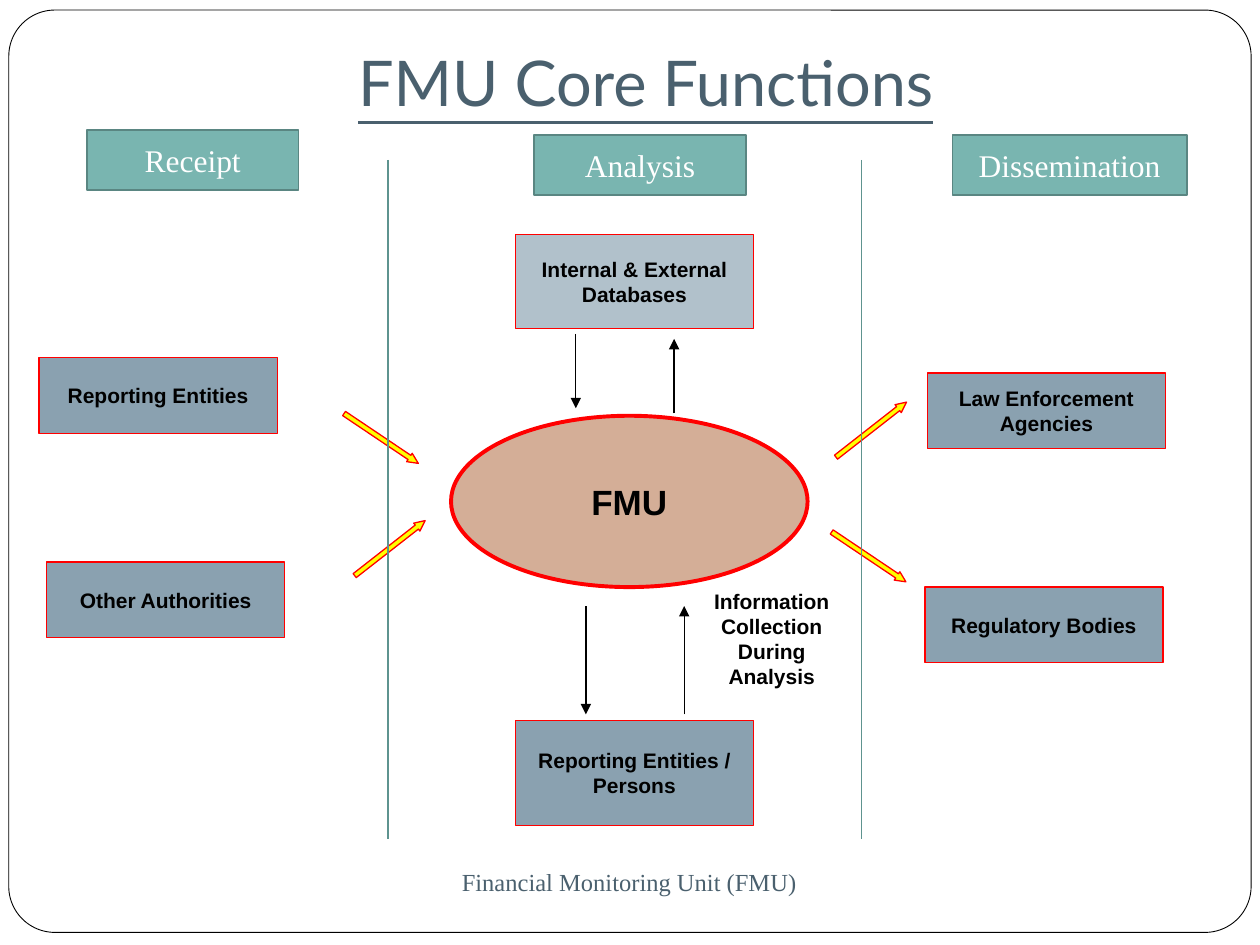
from pptx import Presentation
from pptx import util as u
from pptx.dml.color import RGBColor
from pptx.enum import shapes, text
from pptx.oxml.ns import qn
from lxml import etree

KIND = shapes.MSO_SHAPE
MID = text.MSO_ANCHOR.MIDDLE
WIDE, SLIM = 1.89, 1.68


def color(code):
    """Turn a hex string into a colour."""
    return RGBColor.from_string(code)


def place(item, box):
    """Set left, top, width and height in inches."""
    item.left, item.top, item.width, item.height = map(u.Inches, box)


def write(item, words, size=12, font="Arial", ink="000000", bold=False,
          under=False, anchor=MID, space=None):
    """Put formatted, centred text into a shape."""
    frame = item.text_frame
    frame.word_wrap = True
    frame.auto_size = text.MSO_AUTO_SIZE.NONE
    frame.vertical_anchor = anchor
    para = frame.paragraphs[0]
    para.alignment = text.PP_ALIGN.CENTER
    para.line_spacing = space
    run = para.add_run()
    run.text = words
    run.font.size = u.Pt(size)
    run.font.name = font
    run.font.bold = bold
    run.font.underline = under
    run.font.color.rgb = color(ink)


def draw(slide, kind, box, fill, edge, width=0.75):
    """Add a filled and outlined preset shape."""
    item = slide.shapes.add_shape(kind, *map(u.Inches, box))
    item.shadow.inherit = False
    item.fill.solid()
    item.fill.fore_color.rgb = color(fill)
    item.line.color.rgb = color(edge)
    item.line.width = u.Pt(width)
    return item


def node(slide, words, left, top, high=0.6, fill="8AA1B0"):
    """Add a red-edged box with a bold label."""
    item = draw(slide, KIND.RECTANGLE, (left, top, WIDE, high), fill, "FF0000")
    write(item, words, bold=True)


def head(slide, words, left, top, wide=SLIM):
    """Add a teal column heading."""
    item = draw(slide, KIND.RECTANGLE, (left, top, wide, 0.48), "79B5B0", "5A8682", 1)
    write(item, words, size=18, font="Times New Roman", ink="FFFFFF")


def label(slide, words, box, **style):
    """Add a text box."""
    write(slide.shapes.add_textbox(*map(u.Inches, box)), words, **style)


def flow(slide, left, top, turn):
    """Add a yellow block arrow turned by some degrees."""
    item = draw(slide, KIND.RIGHT_ARROW, (left, top, 0.71, 0.08), "FFFF00", "FF0000")
    item.adjustments[1] = 1.05
    item.rotation = turn


def rule(slide, x, start, end, ink="000000", arrow=True):
    """Add an upright line, with an arrowhead at its end if wanted."""
    item = slide.shapes.add_connector(
        shapes.MSO_CONNECTOR.STRAIGHT, *map(u.Inches, (x, start, x, end)))
    item.line.color.rgb = color(ink)
    item.line.width = u.Pt(0.75)
    if arrow:
        tail = etree.SubElement(item.line._get_or_add_ln(), qn("a:tailEnd"))
        tail.set("type", "triangle")
    etree.SubElement(item._element.spPr, qn("a:effectLst"))


def main():
    """Build and save the slide."""
    deck = Presentation()
    deck.slide_width, deck.slide_height = u.Inches(10), u.Inches(7.5)
    slide = deck.slides.add_slide(deck.slide_layouts[5])
    title = slide.shapes.title

    border = draw(slide, KIND.ROUNDED_RECTANGLE, (0.07, 0.08, 9.86, 7.32),
                  "FFFFFF", "000000", 0.5)
    border.adjustments[0] = 0.05
    title._element.addprevious(border._element)
    place(title, (0.25, 0.24, 9.75, 0.8))
    title.text_frame.margin_bottom = u.Inches(0.1)
    write(title, "FMU Core Functions", size=36, font="Lato", ink="4A606E",
          under=True, anchor=text.MSO_ANCHOR.BOTTOM, space=0.8)
    label(slide, "Financial Monitoring Unit (FMU)", (2.83, 6.75, 4.33, 0.5),
          size=14, font="Times New Roman", ink="4A606E")

    hub = draw(slide, KIND.OVAL, (3.58, 3.3, 2.83, 1.36), "D4AE97", "FF0000", 2.25)
    write(hub, "FMU", size=20, bold=True)

    for words, *spot in (
            ("Reporting Entities / Persons", 4.09, 5.72, 0.83),
            ("Reporting Entities", 0.31, 2.84),
            ("Other Authorities", 0.37, 4.46),
            ("Law Enforcement Agencies", 7.36, 2.96),
            ("Regulatory Bodies", 7.34, 4.66),
            ("Internal & External Databases", 4.09, 1.86, 0.75, "B1C1CB")):
        node(slide, words, *spot)

    for left, top, turn in ((2.67, 3.44, 33.9), (2.74, 4.31, 322),
                            (6.56, 3.37, 322), (6.54, 4.38, 33.9)):
        flow(slide, left, top, turn)

    for x, start, end in ((4.65, 4.81, 5.67), (5.43, 5.67, 4.81),
                          (4.57, 2.65, 3.24), (5.35, 3.28, 2.69)):
        rule(slide, x, start, end)

    label(slide, "Information Collection During Analysis", (5.43, 4.62, 1.39, 0.91),
          bold=True, anchor=text.MSO_ANCHOR.TOP)
    for x in (3.08, 6.84):
        rule(slide, x, 1.27, 6.66, ink="5E938F", arrow=False)

    head(slide, "Dissemination", 7.56, 1.07, 1.86)
    head(slide, "Analysis", 4.24, 1.07)
    head(slide, "Receipt", 0.69, 1.03)
    deck.save("out.pptx")


if __name__ == "__main__":
    main()
